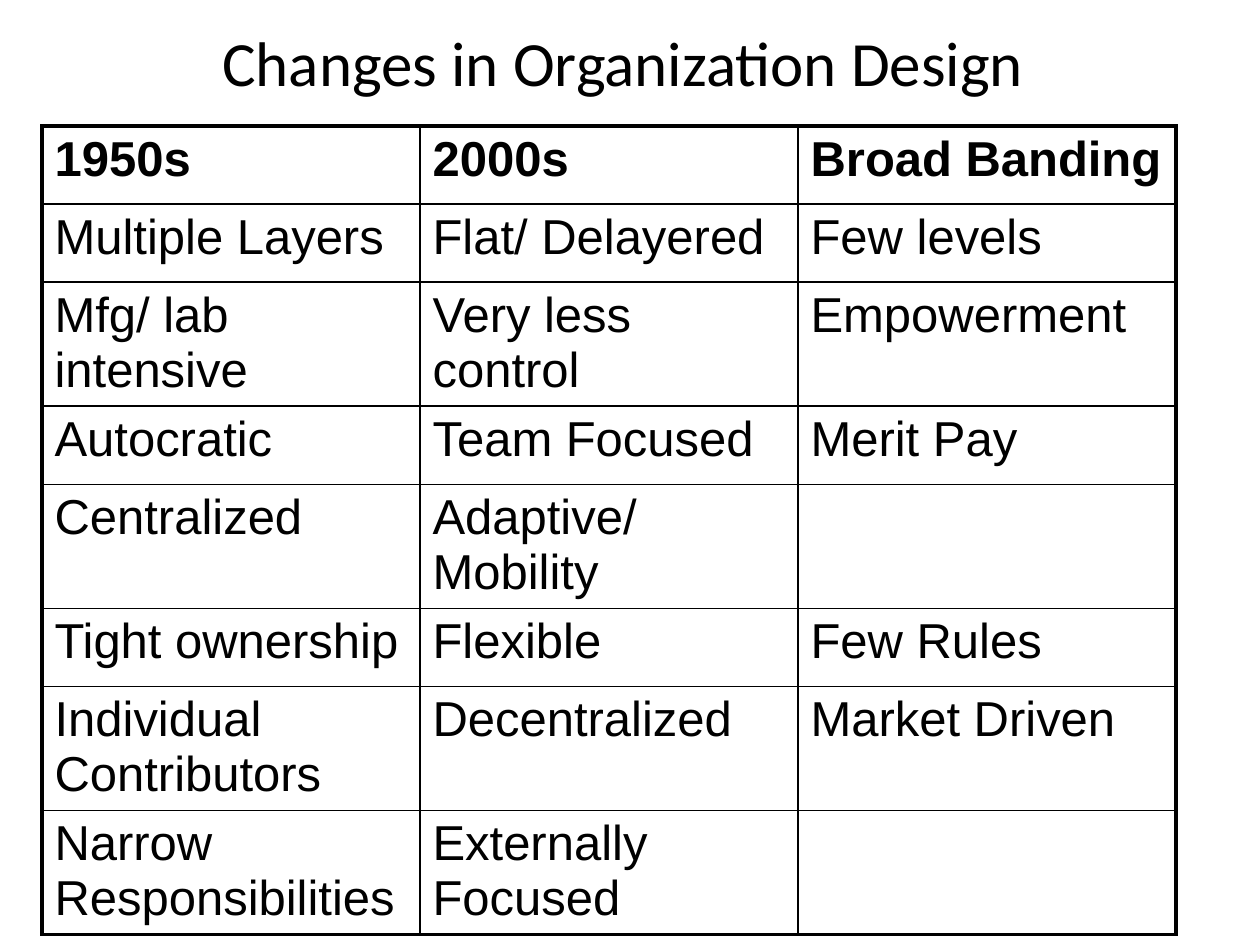
from lxml.etree import SubElement
from pptx import Presentation
from pptx.dml.color import RGBColor
from pptx.enum.text import MSO_ANCHOR, PP_ALIGN
from pptx.oxml.ns import qn
from pptx.util import Pt

BLACK = "000000"
THIN, THICK = 1, 2.25
ROWS = [
    ("1950s", "2000s", "Broad Banding"),
    ("Multiple Layers", "Flat/ Delayered", "Few levels"),
    ("Mfg/ lab intensive", "Very less control", "Empowerment"),
    ("Autocratic", "Team Focused", "Merit Pay"),
    ("Centralized", "Adaptive/ Mobility", ""),
    ("Tight ownership", "Flexible", "Few Rules"),
    ("Individual Contributors", "Decentralized", "Market Driven"),
    ("Narrow Responsibilities", "Externally Focused", ""),
]
TWO_LINE_ROWS = {2, 4, 6, 7}
ONE_LINE_HEIGHT, TWO_LINE_HEIGHT = Pt(44.64), Pt(69.7)
TITLE_FONT = {"name": "Calibri", "size": Pt(36), "bold": False}
HEADER_FONT = {"name": "Arial", "size": Pt(28), "bold": True}
BODY_FONT = {**HEADER_FONT, "bold": False}


def color(hex_string):
    """Turn a hex string into a colour."""
    return RGBColor.from_string(hex_string)


def write(frame, text, font):
    """Write one formatted span into a text frame."""
    span = frame.paragraphs[0].add_run()
    span.text = text
    for name, value in font.items():
        setattr(span.font, name, value)
    span.font.color.rgb = color(BLACK)


def add_title(page, text):
    """Add the centred heading."""
    box = page.shapes.add_textbox(Pt(36), Pt(22), Pt(648), Pt(26))
    frame = box.text_frame
    frame.word_wrap = True
    frame.vertical_anchor = MSO_ANCHOR.MIDDLE
    frame.paragraphs[0].alignment = PP_ALIGN.CENTER
    write(frame, text, TITLE_FONT)


def set_borders(cell, widths):
    """Draw the left, right, top and bottom lines of a cell."""
    properties = cell._tc.get_or_add_tcPr()
    for side, width in zip("LRTB", widths):
        line = SubElement(properties, qn(f"a:ln{side}"), w=str(Pt(width)))
        fill = SubElement(line, qn("a:solidFill"))
        SubElement(fill, qn("a:srgbClr"), val=BLACK)


def add_grid(page, rows):
    """Add the table with a thick outline and thin inner lines."""
    last_row, last_column = len(rows) - 1, len(rows[0]) - 1
    table = page.shapes.add_table(
        len(rows), len(rows[0]), Pt(24), Pt(72), Pt(648), ONE_LINE_HEIGHT * len(rows)
    ).table
    table.first_row = table.horz_banding = False
    for row, texts in enumerate(rows):
        if row in TWO_LINE_ROWS:
            table.rows[row].height = TWO_LINE_HEIGHT
        for column, text in enumerate(texts):
            cell = table.cell(row, column)
            edges = (column == 0, column == last_column, row == 0, row == last_row)
            set_borders(cell, [THICK if edge else THIN for edge in edges])
            cell.fill.background()
            cell.margin_bottom = Pt(0)
            if text:
                write(cell.text_frame, text, BODY_FONT if row else HEADER_FONT)


def main():
    """Build and save the slide."""
    deck = Presentation()
    deck.slide_width, deck.slide_height = Pt(720), Pt(540)
    page = deck.slides.add_slide(deck.slide_layouts[6])
    add_title(page, "Changes in Organization Design ")
    add_grid(page, ROWS)
    deck.save("out.pptx")


if __name__ == "__main__":
    main()
